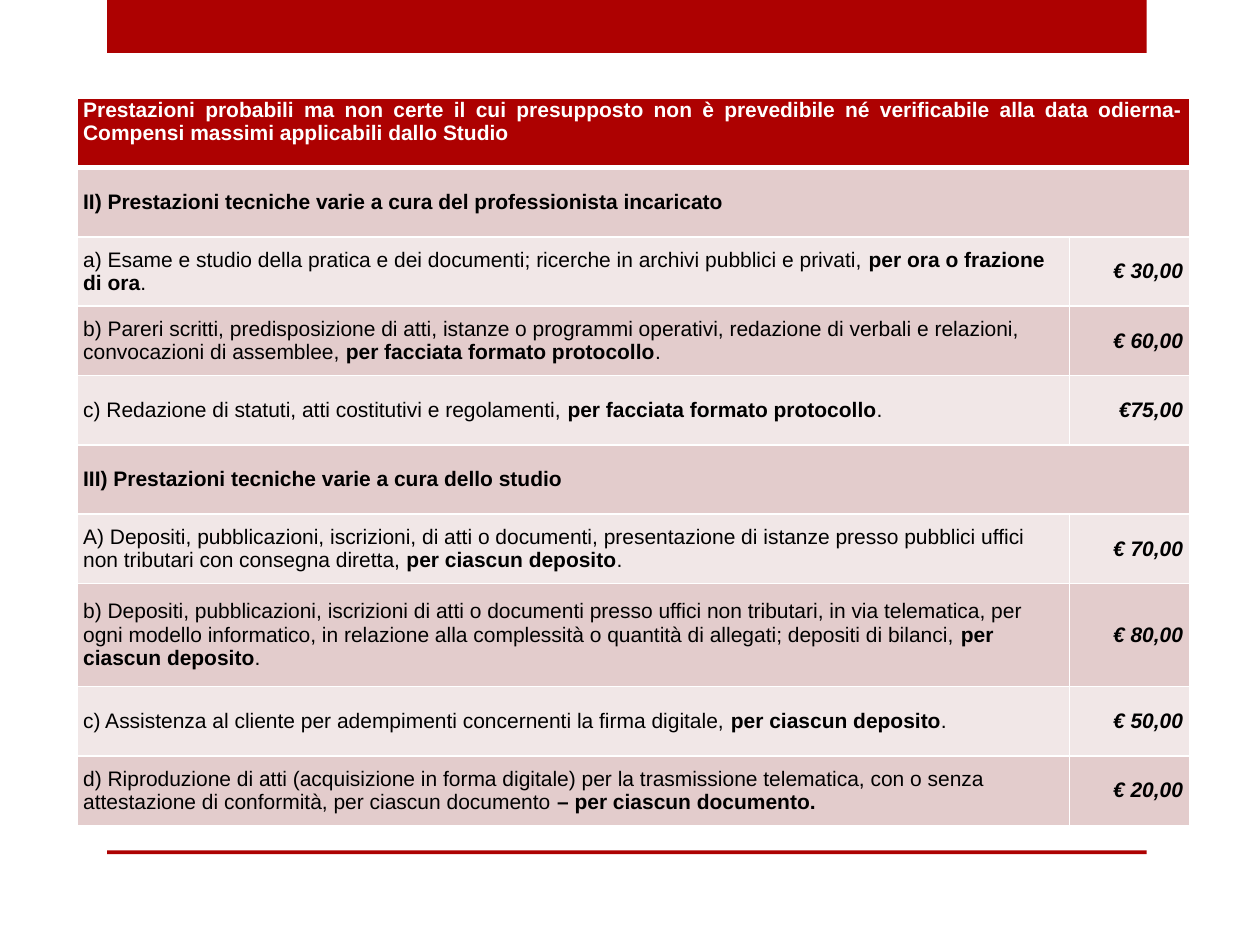
from lxml import etree
from pptx import Presentation
from pptx.dml.color import RGBColor
from pptx.enum.shapes import MSO_SHAPE
from pptx.enum.text import MSO_ANCHOR, PP_ALIGN
from pptx.oxml.ns import qn
from pptx.util import Inches, Pt

RECT = MSO_SHAPE.RECTANGLE
TOP, MIDDLE = MSO_ANCHOR.TOP, MSO_ANCHOR.MIDDLE
LEFT, RIGHT, JUSTIFY = PP_ALIGN.LEFT, PP_ALIGN.RIGHT, PP_ALIGN.JUSTIFY

COLORS = {"red": "AD0101", "dark": "E3CCCC", "light": "F1E7E7",
          "white": "FFFFFF", "black": "000000"}
BARS = [(0, 0.42), (6.75, 0.03)]
COLUMNS = [7.88, 0.95]
ROW_HEIGHT, TALL_ROW, TALL_HEIGHT = 0.55, 7, 0.82

HEADER = ("Prestazioni probabili ma non certe il cui presupposto non è prevedibile né "
          "verificabile alla data odierna- Compensi massimi applicabili dallo Studio")
SERVICES = [
    ("", "II) Prestazioni tecniche varie a cura del professionista incaricato", "", None),
    ("a) Esame e studio della pratica e dei documenti; ricerche in archivi pubblici e privati, ",
     "per ora o frazione di ora", ".", "€ 30,00"),
    ("b) Pareri scritti, predisposizione di atti, istanze o programmi operativi, redazione di "
     "verbali e relazioni, convocazioni di assemblee, ",
     "per facciata formato protocollo", ".", "€ 60,00"),
    ("c) Redazione di statuti, atti costitutivi e regolamenti, ",
     "per facciata formato protocollo", ".", "€75,00"),
    ("", "III) Prestazioni tecniche varie a cura dello studio", "", None),
    ("A) Depositi, pubblicazioni, iscrizioni, di atti o documenti, presentazione di istanze "
     "presso pubblici uffici non tributari con consegna diretta,",
     " per ciascun deposito", ".", "€ 70,00"),
    ("b) Depositi, pubblicazioni, iscrizioni di atti o documenti presso uffici non tributari, "
     "in via telematica, per ogni modello informatico, in relazione alla complessità o "
     "quantità di allegati; depositi di bilanci,",
     " per ciascun deposito", ".", "€ 80,00"),
    ("c) Assistenza al cliente per adempimenti concernenti la firma digitale,",
     " per ciascun deposito", ".", "€ 50,00"),
    ("d) Riproduzione di atti (acquisizione in forma digitale) per la trasmissione telematica, "
     "con o senza attestazione di conformità, per ciascun documento ",
     "– per ciascun documento.", "", "€ 20,00"),
]


def rgb(name):
    return RGBColor.from_string(COLORS[name])


def set_borders(cell, bottom):
    tc_pr = cell._tc.get_or_add_tcPr()
    for i, (side, width) in enumerate(zip(("lnL", "lnR", "lnT", "lnB"), (1, 1, 1, bottom))):
        line = etree.Element(qn(f"a:{side}"), w=str(Pt(width)))
        fill = etree.SubElement(line, qn("a:solidFill"))
        etree.SubElement(fill, qn("a:srgbClr"), val=COLORS["white"])
        tc_pr.insert(i, line)


def style_cell(cell, fill, anchor=MIDDLE, bottom=1):
    margins = {"margin_left": 0.05, "margin_right": 0.05, "margin_top": 0, "margin_bottom": 0}
    for name, value in margins.items():
        setattr(cell, name, Inches(value))
    cell.vertical_anchor = anchor
    cell.fill.solid()
    cell.fill.fore_color.rgb = rgb(fill)
    set_borders(cell, bottom)


def write(cell, runs, align=LEFT, color="black", italic=False):
    p = cell.text_frame.paragraphs[0]
    p.alignment = align
    for text, bold in runs:
        if text:
            r = p.add_run()
            r.text = text
            font = {"name": "Arial", "size": Pt(12), "bold": bold, "italic": italic}
            for name, value in font.items():
                setattr(r.font, name, value)
            r.font.color.rgb = rgb(color)


def add_bars(s):
    for top, height in BARS:
        bar = s.shapes.add_shape(RECT, Inches(0.85), Inches(top), Inches(8.25), Inches(height))
        bar.shadow.inherit = False
        bar.fill.solid()
        bar.fill.fore_color.rgb = rgb("red")
        bar.line.fill.background()


def add_fee_table(s):
    count = len(SERVICES) + 1
    heights = [TALL_HEIGHT if i == TALL_ROW else ROW_HEIGHT for i in range(count)]
    table = s.shapes.add_table(count, len(COLUMNS), Inches(0.61), Inches(0.78),
                               Inches(sum(COLUMNS)), Inches(sum(heights))).table
    for column, width in zip(table.columns, COLUMNS):
        column.width = Inches(width)
    for row, height in zip(table.rows, heights):
        row.height = Inches(height)

    for cell in table.rows[0].cells:
        style_cell(cell, "red", TOP, 3)
    table.cell(0, 0).merge(table.cell(0, 1))
    write(table.cell(0, 0), [(HEADER, True)], JUSTIFY, "white")

    for i, (start, strong, end, price) in enumerate(SERVICES, 1):
        service, fee = table.cell(i, 0), table.cell(i, 1)
        for cell in (service, fee):
            style_cell(cell, "dark" if i % 2 else "light")
        write(service, [(start, False), (strong, True), (end, False)])
        if price:
            write(fee, [(price, True)], RIGHT, italic=True)
        else:
            service.merge(fee)


def main():
    prs = Presentation()
    prs.slide_width, prs.slide_height = Inches(10), Inches(7.5)
    s = prs.slides.add_slide(prs.slide_layouts[6])
    add_bars(s)
    add_fee_table(s)
    prs.save("out.pptx")


if __name__ == "__main__":
    main()
